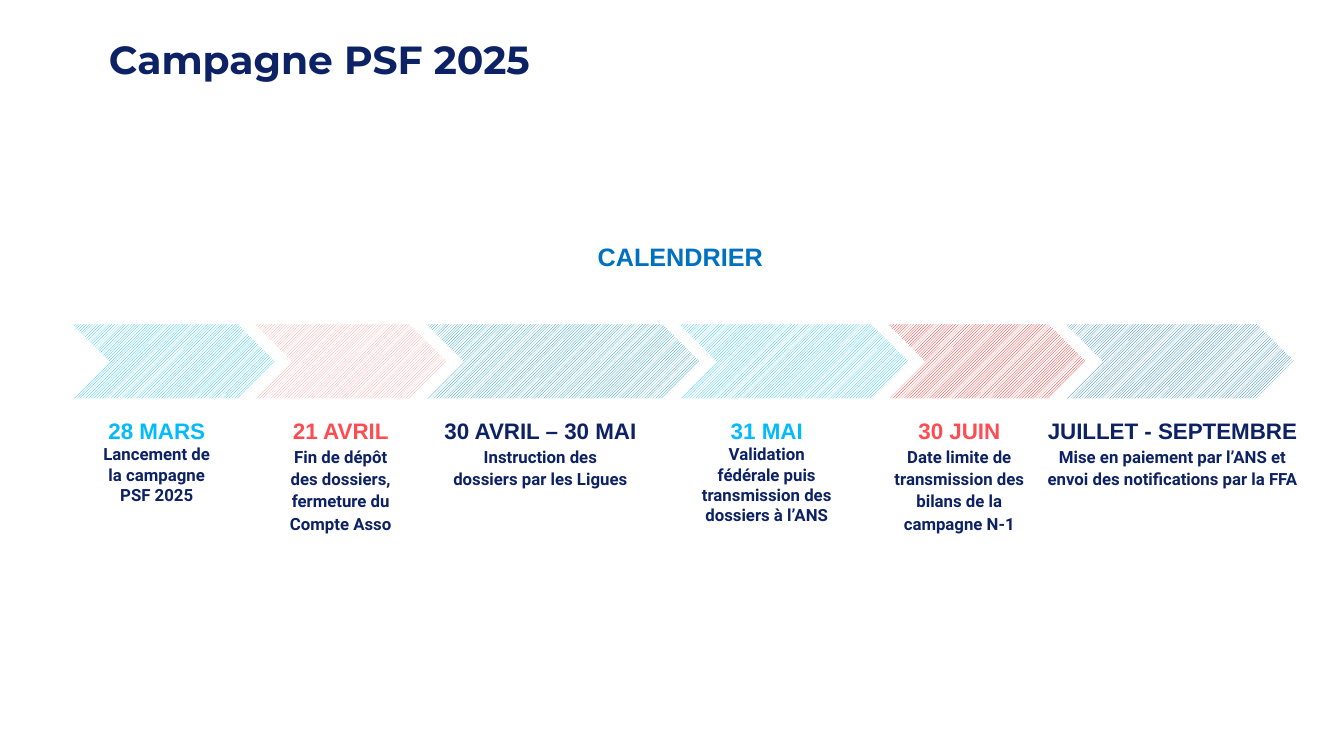
from pptx import Presentation
from pptx.dml.color import RGBColor
from pptx.enum.dml import MSO_PATTERN
from pptx.enum.shapes import MSO_SHAPE
from pptx.enum.text import MSO_ANCHOR, PP_ALIGN
from pptx.util import Inches, Pt

CHEVRON = MSO_SHAPE.CHEVRON
STRIPES = MSO_PATTERN.LIGHT_UPWARD_DIAGONAL
LEFT, CENTER = PP_ALIGN.LEFT, PP_ALIGN.CENTER
BOTTOM = MSO_ANCHOR.BOTTOM

PAPER = RGBColor(0xFE, 0xFF, 0xFE)
NAVY = RGBColor(0x0D, 0x21, 0x65)
BLUE = RGBColor(0x00, 0x70, 0xC0)
TEAL = RGBColor(0x00, 0x8D, 0xC2)
SKY = RGBColor(0x04, 0xBA, 0xFF)
CORAL = RGBColor(0xFF, 0x4C, 0x52)
PINK = RGBColor(0xFF, 0x94, 0x97)
RED = RGBColor(0xFF, 0x00, 0x00)

CHEVRON_TOP, CHEVRON_HEIGHT = 3.21, 0.75
LABEL_TOP = 4.09

# Chevron left, width, colour; label left, width, height;
# date, date colour, line spacing in points, description lines
STEPS = [
    (0.7, 2.04, SKY, 0.79, 1.53, 0.96, "28 MARS", SKY, 14.4,
     ["Lancement de", "la campagne", "PSF 2025"]),
    (2.51, 1.93, PINK, 2.45, 1.86, 1.27, "21 AVRIL", CORAL, 16,
     ["Fin de dépôt", "des dossiers,", "fermeture du", "Compte Asso"]),
    (4.21, 2.74, TEAL, 4.19, 2.34, 0.8, "30 AVRIL – 30 MAI", NAVY, 16,
     ["Instruction des", "dossiers par les Ligues"]),
    (6.72, 2.3, SKY, 6.84, 1.53, 1.16, "31 MAI", SKY, 14.4,
     ["Validation fédérale puis transmission des dossiers à l’ANS"]),
    (8.79, 1.99, RED, 8.68, 1.67, 1.25, "30 JUIN", CORAL, 16,
     ["Date limite de transmission des bilans de la campagne N-1"]),
    (10.55, 2.3, BLUE, 10.25, 2.76, 0.81, "JUILLET - SEPTEMBRE", NAVY, 16,
     ["Mise en paiement par l’ANS et envoi des notifications par la FFA"]),
]


def write(paragraph, text, size, font, color, align=LEFT):
    paragraph.alignment = align
    run = paragraph.add_run()
    run.text = text
    run.font.size = Pt(size)
    run.font.name = font
    run.font.bold = True
    run.font.color.rgb = color


def add_label(left, top, width, height):
    label = slide.shapes.add_textbox(
        Inches(left), Inches(top), Inches(width), Inches(height))
    label.text_frame.word_wrap = True
    return label.text_frame


prs = Presentation()
prs.slide_width, prs.slide_height = Inches(13.33), Inches(7.5)
slide = prs.slides.add_slide(prs.slide_layouts[5])
slide.background.fill.solid()
slide.background.fill.fore_color.rgb = PAPER

# Title
title = slide.shapes.title
title.left, title.top = Inches(0.98), Inches(0.34)
title.width, title.height = Inches(11.38), Inches(0.53)
title.text_frame.vertical_anchor = BOTTOM
heading = title.text_frame.paragraphs[0]
heading.line_spacing = 0.9
write(heading, "Campagne PSF 2025", 28, "Montserrat", NAVY)

# Calendar heading
calendar = add_label(5.83, 2.34, 2.03, 0.4)
write(calendar.paragraphs[0], "CALENDRIER", 18, "Arial", BLUE)

# Timeline: a striped chevron and a dated label for each step
timeline = slide.shapes.add_group_shape()
for (arrow_left, arrow_width, stripe_color, label_left, label_width,
     label_height, date, date_color, spacing, lines) in STEPS:
    arrow = timeline.shapes.add_shape(
        CHEVRON, Inches(arrow_left), Inches(CHEVRON_TOP),
        Inches(arrow_width), Inches(CHEVRON_HEIGHT))
    arrow.shadow.inherit = False
    arrow.fill.patterned()
    arrow.fill.pattern = STRIPES
    arrow.fill.fore_color.rgb = stripe_color
    arrow.fill.back_color.rgb = PAPER
    arrow.line.color.rgb = PAPER
    arrow.line.width = Pt(1)

    step = add_label(label_left, LABEL_TOP, label_width, label_height)
    write(step.paragraphs[0], date, 16, "Arial", date_color, CENTER)
    for line in lines:
        description = step.add_paragraph()
        description.line_spacing = Pt(spacing)
        write(description, line, 12, "Roboto", NAVY, CENTER)

prs.save("out.pptx")
